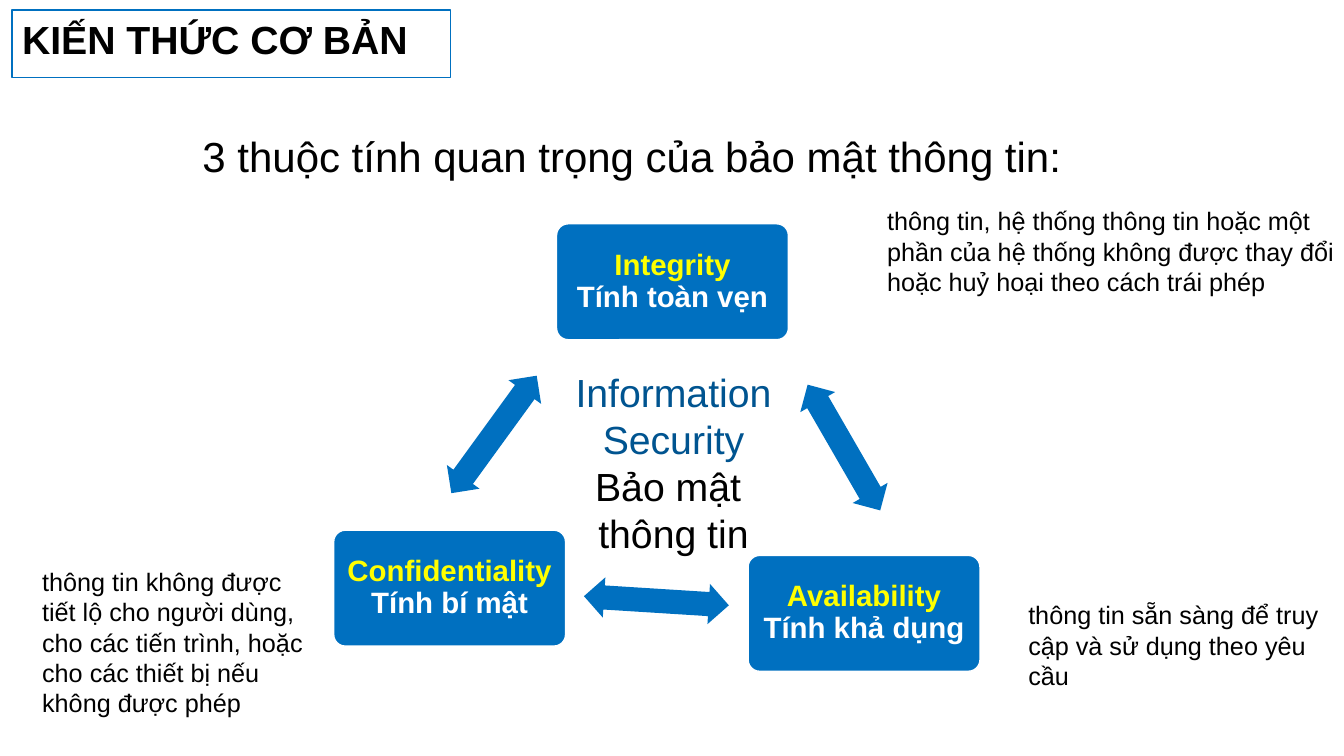
from pptx import Presentation
from pptx.dml.color import RGBColor
from pptx.enum.shapes import MSO_SHAPE as Shape
from pptx.enum.text import MSO_ANCHOR as Anchor, MSO_AUTO_SIZE as AutoSize, PP_ALIGN as Align
from pptx.util import Pt

PX = 9144
BLUE, NAVY, YELLOW = "0070C0", "005490", "FFFF00"
BLACK, WHITE = "000000", "FFFFFF"

CARD_SIZE = (230, 115)
ARROW_SIZE = (144, 40)
CARDS = [
    (552, 222, "Integrity", "Tính toàn vẹn"),
    (742, 551, "Availability", "Tính khả dụng"),
    (331, 526, "Confidentiality", "Tính bí mật"),
]
ARROWS = [(765, 424, 60), (579, 576, 183.6), (418, 411, 306)]
NOTES = [
    ((870, 199, 464, 101), "thông tin, hệ thống thông tin hoặc một phần của hệ thống "
     "không được thay đổi hoặc huỷ hoại theo cách trái phép"),
    ((32, 557, 287, 162), "thông tin không được tiết lộ cho người dùng, cho các tiến trình, "
     "hoặc cho các thiết bị nếu không được phép"),
    ((1010, 590, 319, 101), "thông tin sẵn sàng để truy cập và sử dụng theo yêu cầu"),
]


def px(*lengths):
    return [length * PX for length in lengths]


def color(value):
    return RGBColor.from_string(value)


def write(frame, lines, size, bold=False, align=Align.LEFT):
    para = frame.paragraphs[0]
    para.alignment = align
    para.font.size = Pt(size)
    para.font.name = "Arial"
    para.font.bold = bold
    for index, (text, ink) in enumerate(lines):
        if index:
            para.add_line_break()
        span = para.add_run()
        span.text = text
        span.font.color.rgb = color(ink)
    return para


def add_text(page, box, lines, size, align=Align.LEFT, wrap=True, grow=True):
    frame = page.shapes.add_textbox(*px(*box)).text_frame
    frame.word_wrap = wrap
    frame.auto_size = AutoSize.SHAPE_TO_FIT_TEXT if grow else AutoSize.NONE
    return write(frame, lines, size, align=align)


def add_block(page, kind, box, fill, line=None):
    block = page.shapes.add_shape(kind, *px(*box))
    block.shadow.inherit = False
    block.fill.solid()
    block.fill.fore_color.rgb = color(fill)
    if line:
        block.line.color.rgb = color(line)
        block.line.width = Pt(1)
    else:
        block.line.fill.background()
    return block


def add_heading(page, box):
    frame = add_block(page, Shape.RECTANGLE, box, WHITE, BLUE).text_frame
    frame.vertical_anchor = Anchor.TOP
    write(frame, [("KIẾN THỨC CƠ BẢN", BLACK)], 28, bold=True)


def add_card(page, box, english, vietnamese):
    card = add_block(page, Shape.ROUNDED_RECTANGLE, box, BLUE, WHITE)
    card.adjustments[0] = 0.1
    frame = card.text_frame
    frame.margin_left, frame.margin_right = px(5, 5)
    frame.vertical_anchor = Anchor.MIDDLE
    para = write(frame, [(english, YELLOW), (vietnamese, WHITE)], 21, True, Align.CENTER)
    para.line_spacing = 0.9


def add_arrow(page, box, angle):
    arrow = add_block(page, Shape.LEFT_RIGHT_ARROW, box, BLUE)
    arrow.adjustments[0] = 0.6
    arrow.adjustments[1] = 0.5
    arrow.rotation = angle


def add_triangle(page, box):
    left, top, width, height = box
    for x, y, english, vietnamese in CARDS:
        add_card(page, (left + x, top + y, *CARD_SIZE), english, vietnamese)
    for x, y, angle in ARROWS:
        add_arrow(page, (left + x, top + y, *ARROW_SIZE), angle)
    center = [("Information", NAVY), ("Security", NAVY), ("Bảo mật ", BLACK), ("thông tin", BLACK)]
    center_box = (left + width // 2 - 113, top + 360, 226, 199)
    add_text(page, center_box, center, 28, Align.CENTER, wrap=False)


def main():
    deck = Presentation()
    deck.slide_width, deck.slide_height = px(1333, 750)
    page = deck.slides.add_slide(deck.slide_layouts[6])
    intro = [("3 thuộc tính quan trọng của bảo mật thông tin:", BLACK)]
    add_text(page, (191, 125, 950, 550), intro, 30, grow=False).space_before = Pt(4)
    add_triangle(page, (0, 0, 1336, 750))
    add_heading(page, (12, 10, 435, 67))
    for box, text in NOTES:
        add_text(page, box, [(text, BLACK)], 18)
    deck.save("out.pptx")


if __name__ == "__main__":
    main()
